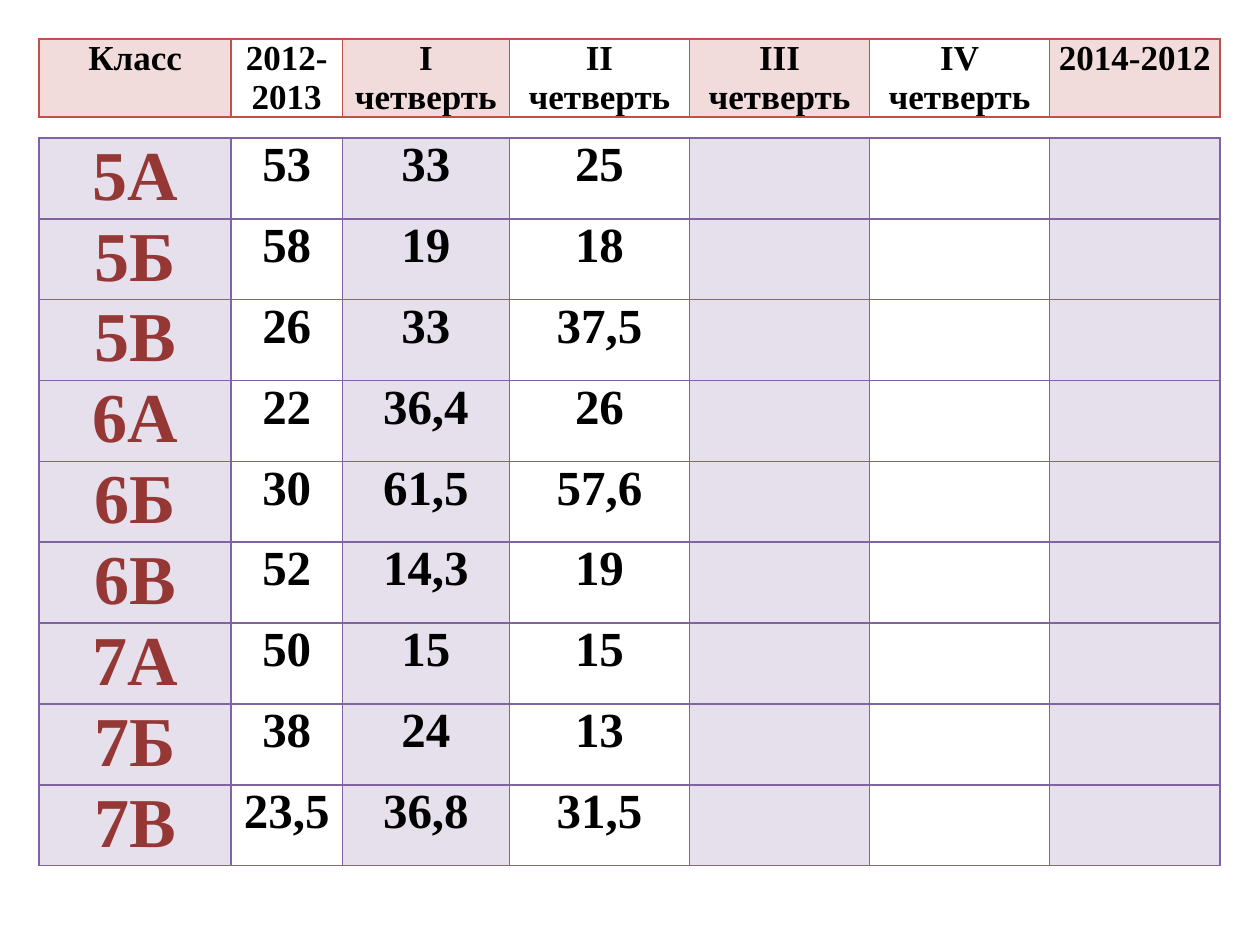
import pptx
import pptx.util
import pptx.dml.color
import pptx.enum.text
import pptx.oxml
import pptx.oxml.ns
from pptx.util import Cm, Pt

RGBColor = pptx.dml.color.RGBColor
BLACK = RGBColor(0x00, 0x00, 0x00)
RED = RGBColor(0x95, 0x37, 0x35)
ROSE = RGBColor(0xF2, 0xDC, 0xDB)
LILAC = RGBColor(0xE6, 0xE0, 0xEC)
BRICK = RGBColor(0xC0, 0x50, 0x4D)
PURPLE = RGBColor(0x80, 0x64, 0xA2)

HEADS = [["Класс", "2012-2013", "I\nчетверть", "II\nчетверть",
          "III\nчетверть", "IV\nчетверть", "2014-2012"]]
SHIFTS = {"I": 0.53, "II": 0.18, "III": 0.53}
MARKS = [
    ["5А", "53", "33", "25"],
    ["5Б", "58", "19", "18"],
    ["5В", "26", "33", "37,5"],
    ["6А", "22", "36,4", "26"],
    ["6Б", "30", "61,5", "57,6"],
    ["6В", "52", "14,3", "19"],
    ["7А", "50", "15", "15"],
    ["7Б", "38", "24", "13"],
    ["7В", "23,5", "36,8", "31,5"],
]
WIDTHS = [3.87, 2.24, 3.37, 3.63, 3.63, 3.63, 3.43]
LEFT = 0.79


def edge(cell, color):
    props = cell._tc.get_or_add_tcPr()
    for place, side in enumerate(("lnL", "lnR", "lnT", "lnB")):
        line = pptx.oxml.parse_xml(
            f'<a:{side} {pptx.oxml.ns.nsdecls("a")} w="12700"><a:solidFill>'
            f'<a:srgbClr val="{color}"/></a:solidFill></a:{side}>')
        props.insert(place, line)


def write(cell, text, size, color, pad):
    cell.margin_left = cell.margin_right = Cm(pad)
    cell.margin_top = cell.margin_bottom = 0
    cell.text = text
    for para in cell.text_frame.paragraphs:
        para.alignment = pptx.enum.text.PP_ALIGN.CENTER
        font = para.font
        font.name, font.size, font.bold = "Times New Roman", Pt(size), True
        font.color.rgb = color
        if para.text in SHIFTS:
            props = para._p.get_or_add_pPr()
            props.set("marL", "0")
            props.set("indent", str(-Cm(SHIFTS[para.text])))


def grid(slide, rows, top, high, tint, line, styles):
    table = slide.shapes.add_table(
        len(rows), len(WIDTHS), Cm(LEFT), Cm(top),
        Cm(sum(WIDTHS)), Cm(high * len(rows))).table
    table.first_row = table.horz_banding = False
    for col, width in zip(table.columns, WIDTHS):
        col.width = Cm(width)
    for r, row in enumerate(rows):
        table.rows[r].height = Cm(high)
        for c in range(len(WIDTHS)):
            cell = table.cell(r, c)
            if c % 2:
                cell.fill.background()
            else:
                cell.fill.solid()
                cell.fill.fore_color.rgb = tint
            edge(cell, line)
            if c < len(row):
                write(cell, row[c], *styles[min(c, 1)])


deck = pptx.Presentation()
deck.slide_width, deck.slide_height = Cm(25.4), Cm(19.05)
slide = deck.slides.add_slide(deck.slide_layouts[6])
grid(slide, MARKS, 2.78, 1.63, LILAC, PURPLE,
     [(40, RED, 0.1), (28, BLACK, 0.18)])
grid(slide, HEADS, 0.79, 1.57, ROSE, BRICK, [(20, BLACK, 0.1)] * 2)
deck.save("out.pptx")
